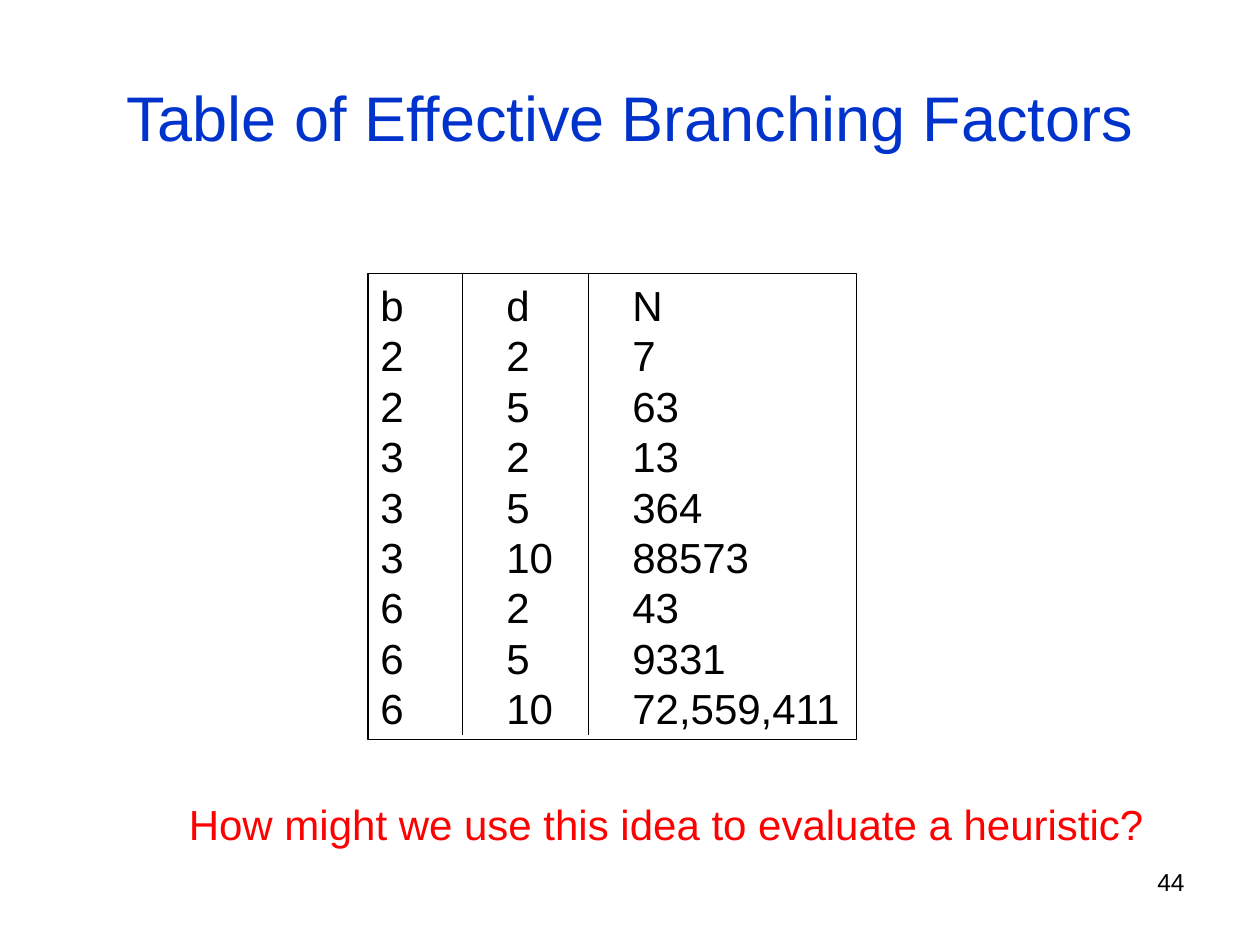
from lxml import etree
from pptx import Presentation
from pptx.dml.color import RGBColor
from pptx.enum.shapes import MSO_CONNECTOR, MSO_SHAPE
from pptx.enum.text import MSO_ANCHOR, MSO_AUTO_SIZE, PP_ALIGN
from pptx.oxml.ns import qn
from pptx.util import Inches, Pt

STRAIGHT = MSO_CONNECTOR.STRAIGHT
RECTANGLE = MSO_SHAPE.RECTANGLE
TOP, MIDDLE = MSO_ANCHOR.TOP, MSO_ANCHOR.MIDDLE
LEFT, CENTER, RIGHT = PP_ALIGN.LEFT, PP_ALIGN.CENTER, PP_ALIGN.RIGHT
FIT_SHAPE = MSO_AUTO_SIZE.SHAPE_TO_FIT_TEXT

BLACK = RGBColor(0x00, 0x00, 0x00)
BLUE = RGBColor(0x00, 0x33, 0xCC)
RED = RGBColor(0xFF, 0x00, 0x00)
FONT = "Arial"

TITLE = "Table of Effective Branching Factors"
QUESTION = "How might we use this idea to evaluate a heuristic?"
PAGE_NUMBER = "44"
ROWS = [
    ("b", "d", "N"),
    (2, 2, "7"),
    (2, 5, "63"),
    (3, 2, "13"),
    (3, 5, "364"),
    (3, 10, "88573"),
    (6, 2, "43"),
    (6, 5, "9331"),
    (6, 10, "72,559,411"),
]

FRAME_LEFT, FRAME_TOP, FRAME_WIDTH = 2.92, 2.17, 3.88
ROW_HEIGHT, COLUMN_WIDTH, MARGIN = 0.4, 1, 0.05
FRAME_HEIGHT = len(ROWS) * ROW_HEIGHT + 2 * MARGIN
DIVIDER_OFFSET, DIVIDER_HEIGHT = 0.75, 3.66


def write(shape, lines, size, color, alignment=LEFT, anchor=TOP, wrap=True):
    frame = shape.text_frame
    frame.text = "\n".join(lines)
    frame.word_wrap = wrap
    frame.vertical_anchor = anchor
    if not wrap:
        frame.auto_size = FIT_SHAPE
    for paragraph in frame.paragraphs:
        paragraph.alignment = alignment
        for run in paragraph.runs:
            run.font.name = FONT
            run.font.size = Pt(size)
            run.font.color.rgb = color


def add_text(slide, box, text, *style, **options):
    shape = slide.shapes.add_textbox(*map(Inches, box))
    write(shape, [text], *style, **options)


def set_tab_stops(paragraph, positions):
    tab_list = etree.SubElement(paragraph._p.get_or_add_pPr(), qn("a:tabLst"))
    for position in positions:
        etree.SubElement(tab_list, qn("a:tab"), pos=str(Inches(position)), algn="l")


def add_factor_table(slide):
    frame = slide.shapes.add_shape(
        RECTANGLE, *map(Inches, (FRAME_LEFT, FRAME_TOP, FRAME_WIDTH, FRAME_HEIGHT))
    )
    frame.shadow.inherit = False
    frame.fill.background()
    frame.line.color.rgb = BLACK
    frame.line.width = Pt(0.75)
    write(frame, ["\t".join(map(str, row)) for row in ROWS], 24, BLACK, wrap=False)
    column_starts = [column * COLUMN_WIDTH for column in range(1, len(ROWS[0]))]
    for paragraph in frame.text_frame.paragraphs:
        paragraph.line_spacing = Pt(ROW_HEIGHT * 72)
        set_tab_stops(paragraph, column_starts)

    for start in column_starts:
        x = Inches(FRAME_LEFT + DIVIDER_OFFSET + start - COLUMN_WIDTH)
        divider = slide.shapes.add_connector(
            STRAIGHT, x, Inches(FRAME_TOP), x, Inches(FRAME_TOP + DIVIDER_HEIGHT)
        )
        divider.line.color.rgb = BLACK
        divider.line.width = Pt(0.75)
        etree.SubElement(divider._element.spPr, qn("a:effectLst"))


def main():
    presentation = Presentation()
    presentation.slide_width = Inches(10)
    presentation.slide_height = Inches(7.5)
    slide = presentation.slides.add_slide(presentation.slide_layouts[6])

    add_text(slide, (7.17, 6.83, 2.33, 0.52), PAGE_NUMBER, 14, BLACK, RIGHT)
    add_text(slide, (0.5, 0.3, 9, 1.25), TITLE, 36, BLUE, CENTER, MIDDLE)
    add_factor_table(slide)
    add_text(slide, (1.4, 6.29, 7.78, 0.5), QUESTION, 24, RED, wrap=False)

    presentation.save("out.pptx")


if __name__ == "__main__":
    main()
